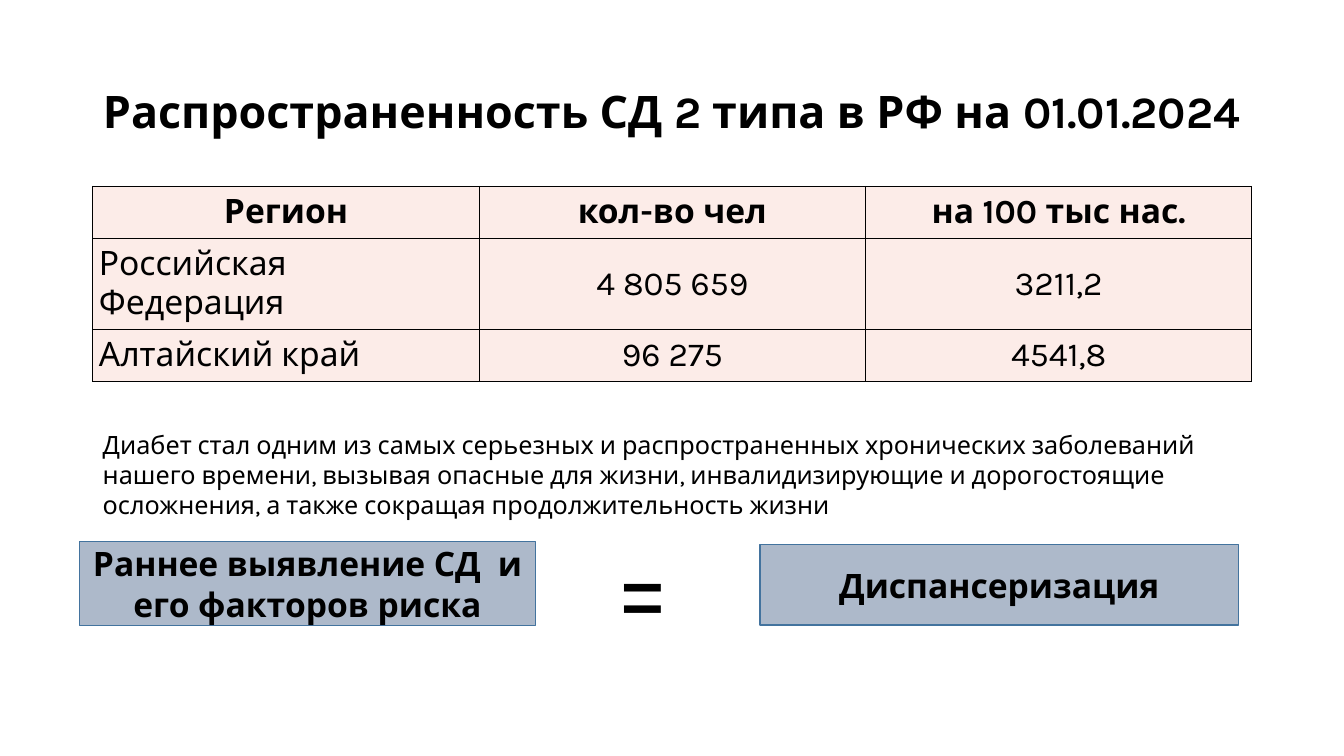
from lxml.etree import SubElement
from pptx import Presentation
from pptx.dml.color import RGBColor
from pptx.enum.shapes import MSO_SHAPE
from pptx.enum.text import MSO_ANCHOR, MSO_AUTO_SIZE, PP_ALIGN
from pptx.oxml.ns import qn
from pptx.util import Cm, Pt

BLACK = RGBColor(0x00, 0x00, 0x00)
PINK = RGBColor(0xFC, 0xEC, 0xE8)
GREY_BLUE = RGBColor(0xAD, 0xB9, 0xCA)
OUTLINE = RGBColor(0x43, 0x73, 0x9E)

LEFT, WIDTH = 2.34, 29.21
ROW_HEIGHTS = (1.31, 2.3, 1.31)
PREVALENCE = (
    ("Регион", "кол-во чел", "на 100 тыс нас."),
    ("Российская Федерация", "4 805 659", "3211,2"),
    ("Алтайский край", "96 275", "4541,8"),
)


class Page:
    """Holds the text style and the slide being built."""

    font_name = "Karla"

    def __init__(self, deck):
        self.slide = deck.slides.add_slide(deck.slide_layouts[5])

    def fill_text(self, frame, text, size, bold=False, align=PP_ALIGN.LEFT):
        frame.word_wrap = True
        frame.text = text
        para = frame.paragraphs[0]
        para.alignment = align
        para.font.name = self.font_name
        para.font.size = Pt(size)
        para.font.bold = bold
        para.font.color.rgb = BLACK
        return para

    def title(self, text, *place):
        box = self.slide.shapes.title
        box.left, box.top, box.width, box.height = map(Cm, place)
        frame = box.text_frame
        frame.auto_size = MSO_AUTO_SIZE.NONE
        frame.vertical_anchor = MSO_ANCHOR.MIDDLE
        self.fill_text(frame, text, 32, bold=True).line_spacing = 0.9

    def text(self, text, size, *place):
        frame = self.slide.shapes.add_textbox(*map(Cm, place)).text_frame
        self.fill_text(frame, text, size)
        frame.auto_size = MSO_AUTO_SIZE.SHAPE_TO_FIT_TEXT

    def panel(self, text, *place):
        box = self.slide.shapes.add_shape(MSO_SHAPE.RECTANGLE, *map(Cm, place))
        box.shadow.inherit = False
        box.fill.solid()
        box.fill.fore_color.rgb = GREY_BLUE
        box.line.color.rgb = OUTLINE
        box.line.width = Pt(1)
        box.text_frame.vertical_anchor = MSO_ANCHOR.MIDDLE
        self.fill_text(box.text_frame, text, 24, True, PP_ALIGN.CENTER)

    def table(self, rows, heights, left, top, width):
        table = self.slide.shapes.add_table(
            len(rows), len(rows[0]), Cm(left), Cm(top), Cm(width), Cm(sum(heights))
        ).table
        for i, values in enumerate(rows):
            table.rows[i].height = Cm(heights[i])
            for j, value in enumerate(values):
                centred = i == 0 or j > 0
                align = PP_ALIGN.CENTER if centred else PP_ALIGN.LEFT
                self.cell(table.cell(i, j), value, i == 0, align)

    def cell(self, cell, value, bold, align):
        cell.margin_left = cell.margin_right = Cm(0.15)
        cell.margin_top = cell.margin_bottom = Cm(0.15)
        cell.vertical_anchor = MSO_ANCHOR.MIDDLE
        self.fill_text(cell.text_frame, value, 24, bold, align)
        properties = cell._tc.get_or_add_tcPr()
        for side in ("a:lnL", "a:lnR", "a:lnT", "a:lnB"):
            border = SubElement(properties, qn(side), w=str(Pt(1)))
            fill = SubElement(border, qn("a:solidFill"))
            SubElement(fill, qn("a:srgbClr"), val=str(BLACK))
        cell.fill.solid()
        cell.fill.fore_color.rgb = PINK


def main():
    deck = Presentation()
    deck.slide_width, deck.slide_height = Cm(33.87), Cm(19.05)
    page = Page(deck)
    page.title("Распространенность СД 2 типа в РФ на 01.01.2024", LEFT, 1.02, WIDTH, 3.68)
    page.table(PREVALENCE, ROW_HEIGHTS, LEFT, 4.7, WIDTH)
    page.text(
        "Диабет стал одним из самых серьезных и распространенных хронических "
        "заболеваний нашего времени, вызывая опасные для жизни, инвалидизирующие "
        "и дорогостоящие осложнения, а также сокращая продолжительность жизни",
        18, LEFT, 10.69, WIDTH, 2.57,
    )
    page.panel("Раннее выявление СД  и его факторов риска", 2.01, 13.64, 11.48, 2.13)
    page.panel("Диспансеризация", 19.15, 13.72, 12.07, 2.03)
    page.text("=", 80, 15.21, 12.83, 1.7, 3.68)
    deck.save("out.pptx")


if __name__ == "__main__":
    main()
